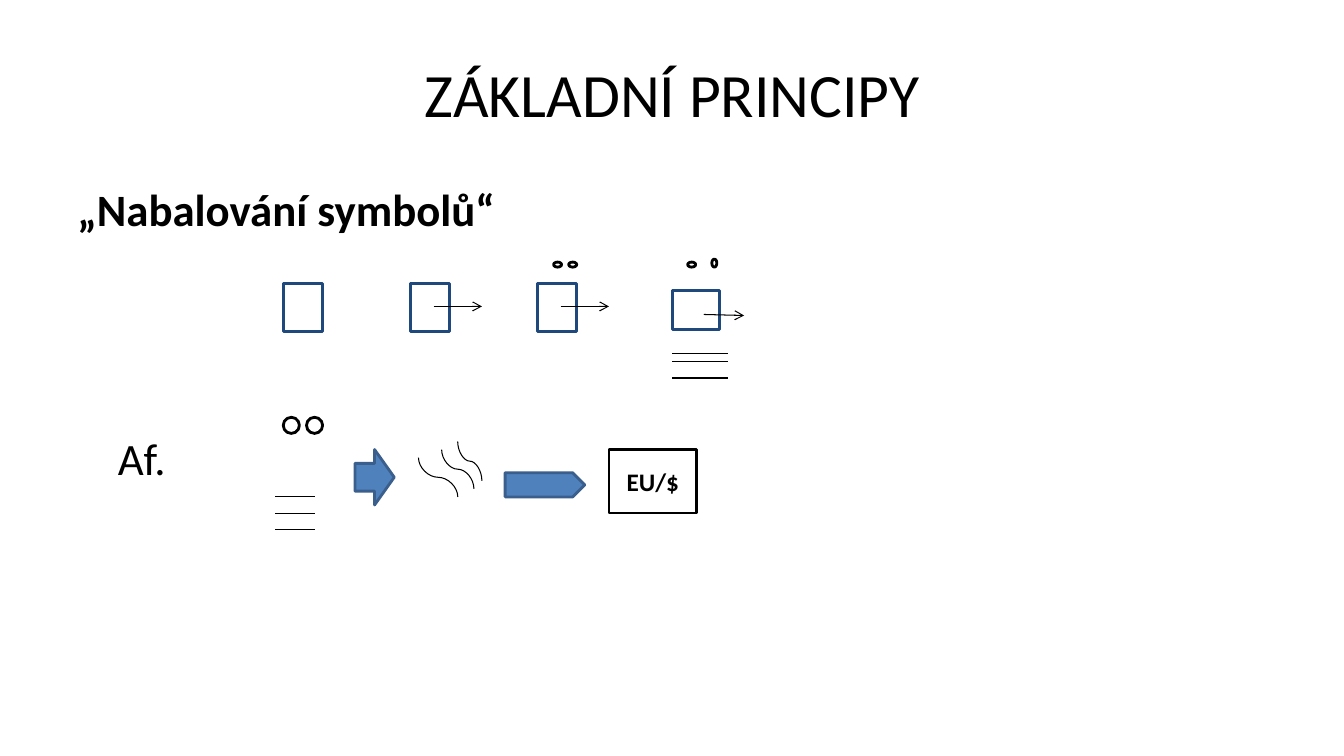
from lxml import etree
from pptx import Presentation
from pptx import util as u
from pptx.dml.color import RGBColor
from pptx.enum import shapes, text
from pptx.oxml.ns import qn

BLACK = RGBColor(0x00, 0x00, 0x00)
WHITE = RGBColor(0xFF, 0xFF, 0xFF)
NAVY = RGBColor(0x1F, 0x49, 0x7D)
BLUE = RGBColor(0x4F, 0x81, 0xBD)
DARK_BLUE = RGBColor(0x3A, 0x5F, 0x8C)
PRESET = shapes.MSO_SHAPE
CONNECTOR = shapes.MSO_CONNECTOR

presentation = Presentation()
presentation.slide_width = u.Inches(13.33)
presentation.slide_height = u.Inches(7.5)
slide = presentation.slides.add_slide(presentation.slide_layouts[5])


def add_symbol(preset, left, top, width, height, outline=BLACK, fill=WHITE):
    shape = slide.shapes.add_shape(preset, *map(u.Inches, (left, top, width, height)))
    shape.shadow.inherit = False
    shape.fill.solid()
    shape.fill.fore_color.rgb = fill
    shape.line.color.rgb = outline
    shape.line.width = u.Pt(2)
    return shape


def add_stroke(x1, y1, x2, y2, kind=CONNECTOR.STRAIGHT, arrow=False):
    connector = slide.shapes.add_connector(kind, *map(u.Inches, (x1, y1, x2, y2)))
    connector.line.color.rgb = BLACK
    connector.line.width = u.Pt(0.75)
    if arrow:
        etree.SubElement(connector.line._get_or_add_ln(), qn("a:tailEnd"), type="arrow")
    etree.SubElement(connector._element.spPr, qn("a:effectLst"))
    return connector


# Title and text
title = slide.shapes.title
title.left, title.top = u.Inches(0.67), u.Inches(0.3)
title.width, title.height = u.Inches(12), u.Inches(1.25)
title.text_frame.text = "ZÁKLADNÍ PRINCIPY"
title.text_frame.vertical_anchor = text.MSO_ANCHOR.MIDDLE
paragraph = title.text_frame.paragraphs[0]
paragraph.alignment = text.PP_ALIGN.CENTER
paragraph.font.name = "Calibri"
paragraph.font.size = u.Pt(44)
paragraph.font.color.rgb = BLACK

body = slide.shapes.add_textbox(*map(u.Inches, (0.67, 1.75, 12, 4.95))).text_frame
body.word_wrap = True
body.text = "„Nabalování symbolů“\nAf."
for paragraph, bold in zip(body.paragraphs, (True, False)):
    paragraph.font.name = "Calibri"
    paragraph.font.size = u.Pt(32)
    paragraph.font.bold = bold
    paragraph.font.color.rgb = BLACK
label = body.paragraphs[1]
label.space_before = u.Pt(140)
label._p.get_or_add_pPr().set("marL", str(u.Inches(0.4)))

# Upper row: a box that gains an arrow, eyes and lines
for step in range(3):
    left = 2.81 + 1.26 * step
    add_symbol(PRESET.RECTANGLE, left, 2.81, 0.39, 0.48, NAVY)
    if step > 0:
        add_stroke(left + 0.23, 3.04, left + 0.71, 3.04, arrow=True)
add_symbol(PRESET.RECTANGLE, 6.67, 2.88, 0.47, 0.39, NAVY)
add_stroke(6.98, 3.12, 7.38, 3.13, arrow=True)
for left in (5.49, 5.64, 6.82):
    add_symbol(PRESET.OVAL, left, 2.6, 0.08, 0.05)
add_symbol(PRESET.OVAL, 7.06, 2.57, 0.05, 0.08)
for y in (3.51, 3.59, 3.75):
    add_stroke(6.67, y, 7.22, y)

# Lower row: circles and lines, waves, currency
for left in (2.81, 3.04):
    add_symbol(PRESET.OVAL, left, 4.14, 0.16, 0.16)
for row in range(3):
    y = 4.93 + 0.16 * row
    add_stroke(2.73, y, 3.12, y)
add_symbol(PRESET.RIGHT_ARROW, 3.52, 4.46, 0.39, 0.55, DARK_BLUE, BLUE)

# Each wave is drawn lying down, then turned a quarter about its centre
WAVE_HEIGHT = 0.39
for left, top, width in ((4.15, 4.54, 0.39), (4.38, 4.46, 0.32), (4.54, 4.38, 0.24)):
    x, y = left + width / 2, top + WAVE_HEIGHT / 2
    wave = add_stroke(x + WAVE_HEIGHT / 2, y - width / 2,
                      x - WAVE_HEIGHT / 2, y + width / 2, CONNECTOR.CURVE)
    wave._element.spPr.find(qn("a:xfrm")).set("rot", str(270 * 60000))

wide_arrow = add_symbol(PRESET.RIGHT_ARROW, 5.01, 4.69, 0.79, 0.24, DARK_BLUE, BLUE)
wide_arrow.adjustments[0] = 1
currency = add_symbol(PRESET.RECTANGLE, 6.04, 4.46, 0.87, 0.63)
currency.text_frame.text = "EU/$"
currency.text_frame.vertical_anchor = text.MSO_ANCHOR.MIDDLE
paragraph = currency.text_frame.paragraphs[0]
paragraph.alignment = text.PP_ALIGN.CENTER
paragraph.font.name = "Calibri"
paragraph.font.size = u.Pt(18)
paragraph.font.bold = True
paragraph.font.color.rgb = BLACK

presentation.save("out.pptx")
